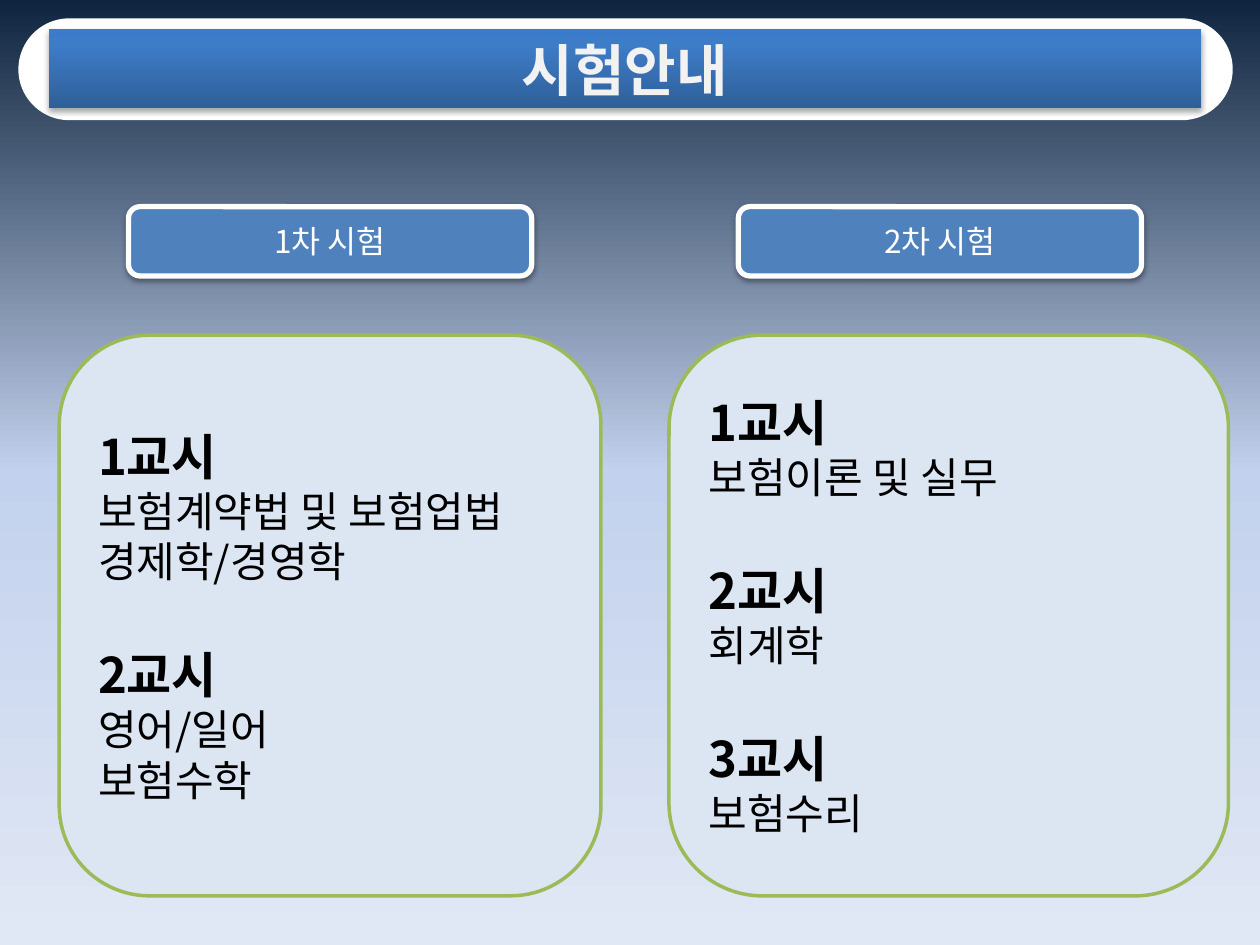
from lxml.etree import SubElement
from pptx import Presentation
from pptx.dml.color import RGBColor
from pptx.enum.shapes import MSO_SHAPE
from pptx.enum.text import MSO_ANCHOR, MSO_AUTO_SIZE, PP_ALIGN
from pptx.oxml.ns import qn
from pptx.util import Inches, Pt

FONT = "Noto Sans CJK KR"
WHITE = RGBColor(0xFF, 0xFF, 0xFF)
BLACK = RGBColor(0x00, 0x00, 0x00)
TITLE_TEXT = RGBColor(0xF2, 0xF2, 0xF2)
BLUE = RGBColor(0x4F, 0x81, 0xBD)
PALE_BLUE = RGBColor(0xDC, 0xE6, 0xF2)
GREEN = RGBColor(0x9B, 0xBB, 0x59)
BACKGROUND_STOPS = [
    (0, RGBColor(0x0F, 0x24, 0x3E)),
    (50, RGBColor(0xC2, 0xD1, 0xED)),
    (100, RGBColor(0xE1, 0xE8, 0xF5)),
]
TITLE_STOPS = [
    (0, RGBColor(0x2F, 0x5F, 0x99)),
    (80, RGBColor(0x3D, 0x7C, 0xC7)),
    (100, RGBColor(0x3A, 0x7C, 0xCB)),
]

TITLE = "시험안내"
# Heading, left and width of the panel, then each period with its subjects
EXAMS = [
    ("1차 시험", 0.47, 4.3, [
        ("1교시", ["보험계약법 및 보험업법", "경제학/경영학"]),
        ("2교시", ["영어/일어", "보험수학"]),
    ]),
    ("2차 시험", 5.31, 4.44, [
        ("1교시", ["보험이론 및 실무"]),
        ("2교시", ["회계학"]),
        ("3교시", ["보험수리"]),
    ]),
]
HEADING_INDENT = 0.55
HEADING_TOP, HEADING_WIDTH, HEADING_HEIGHT = 1.64, 3.2, 0.55
PANEL_TOP, PANEL_HEIGHT = 2.66, 4.45
PERIOD_SIZE, SUBJECT_SIZE = 28, 24
LINE_HEIGHT = 1.2


def set_gradient(owner, fill, stops, angle):
    """Fill with (percent, colour) stops; the angle runs clockwise."""
    fill.gradient()
    gradient = owner.element.find(".//" + qn("a:gradFill"))
    for child in list(gradient):
        gradient.remove(child)
    stop_list = SubElement(gradient, qn("a:gsLst"))
    for percent, color in stops:
        stop = SubElement(stop_list, qn("a:gs"), pos=str(percent * 1000))
        SubElement(stop, qn("a:srgbClr"), val=str(color))
    SubElement(gradient, qn("a:lin"), ang=str(angle * 60000), scaled="0")


def add_shadow(shape, opacity, distance):
    shape.shadow.inherit = False
    effects = shape.element.spPr.find(qn("a:effectLst"))
    shadow = SubElement(
        effects, qn("a:outerShdw"), blurRad=str(Pt(3.1)),
        dist=str(Pt(distance)), dir=str(90 * 60000), rotWithShape="0")
    color = SubElement(shadow, qn("a:srgbClr"), val=str(BLACK))
    SubElement(color, qn("a:alpha"), val=str(opacity * 1000))


def add_rounded(slide, box, fill, line, line_width):
    shape = slide.shapes.add_shape(
        MSO_SHAPE.ROUNDED_RECTANGLE, *(Inches(length) for length in box))
    shape.shadow.inherit = False
    shape.fill.solid()
    shape.fill.fore_color.rgb = fill
    shape.line.color.rgb = line
    shape.line.width = Pt(line_width)
    return shape


def write(paragraph, text, size, color, bold=False, align=PP_ALIGN.CENTER):
    run = paragraph.add_run()
    run.text = text
    paragraph.alignment = align
    font = paragraph.font
    font.name, font.size, font.bold = FONT, Pt(size), bold
    font.color.rgb = color
    SubElement(run.font._element, qn("a:ea"), typeface=FONT)


def add_title(slide):
    pill = add_rounded(slide, (0.16, 0.16, 9.61, 0.78), WHITE, WHITE, 2)
    pill.adjustments[0] = 0.5
    title = slide.shapes.title
    pill.element.addnext(title.element)
    title.left, title.top = Inches(0.39), Inches(0.23)
    title.width, title.height = Inches(9.14), Inches(0.63)
    geometry = SubElement(title.element.spPr, qn("a:prstGeom"), prst="roundRect")
    SubElement(geometry, qn("a:avLst"))
    set_gradient(title, title.fill, TITLE_STOPS, 270)
    add_shadow(title, 35, 1.8)
    frame = title.text_frame
    frame.auto_size = MSO_AUTO_SIZE.NONE
    frame.vertical_anchor = MSO_ANCHOR.MIDDLE
    write(frame.paragraphs[0], TITLE, 32, TITLE_TEXT, bold=True)


def add_exam(slide, heading, left, width, periods):
    box = (left + HEADING_INDENT, HEADING_TOP, HEADING_WIDTH, HEADING_HEIGHT)
    label = add_rounded(slide, box, BLUE, WHITE, 3)
    add_shadow(label, 38, 1.6)
    write(label.text_frame.paragraphs[0], heading, 18, WHITE)

    panel = add_rounded(
        slide, (left, PANEL_TOP, width, PANEL_HEIGHT), PALE_BLUE, GREEN, 2)
    frame = panel.text_frame
    frame.vertical_anchor = MSO_ANCHOR.MIDDLE
    for index, (period, subjects) in enumerate(periods):
        lines = [(period, PERIOD_SIZE, True)]
        lines += [(subject, SUBJECT_SIZE, False) for subject in subjects]
        for text, size, bold in lines:
            first = index == 0 and text == period
            paragraph = frame.paragraphs[0] if first else frame.add_paragraph()
            write(paragraph, text, size, BLACK, bold, PP_ALIGN.LEFT)
            paragraph.line_spacing = Pt(size * LINE_HEIGHT)
            if bold and index:
                paragraph.space_before = Pt(PERIOD_SIZE * LINE_HEIGHT)


def main():
    presentation = Presentation()
    presentation.slide_width, presentation.slide_height = Inches(10), Inches(7.5)
    slide = presentation.slides.add_slide(presentation.slide_layouts[5])
    set_gradient(slide, slide.background.fill, BACKGROUND_STOPS, 90)
    add_title(slide)
    for exam in EXAMS:
        add_exam(slide, *exam)
    presentation.save("out.pptx")


if __name__ == "__main__":
    main()
